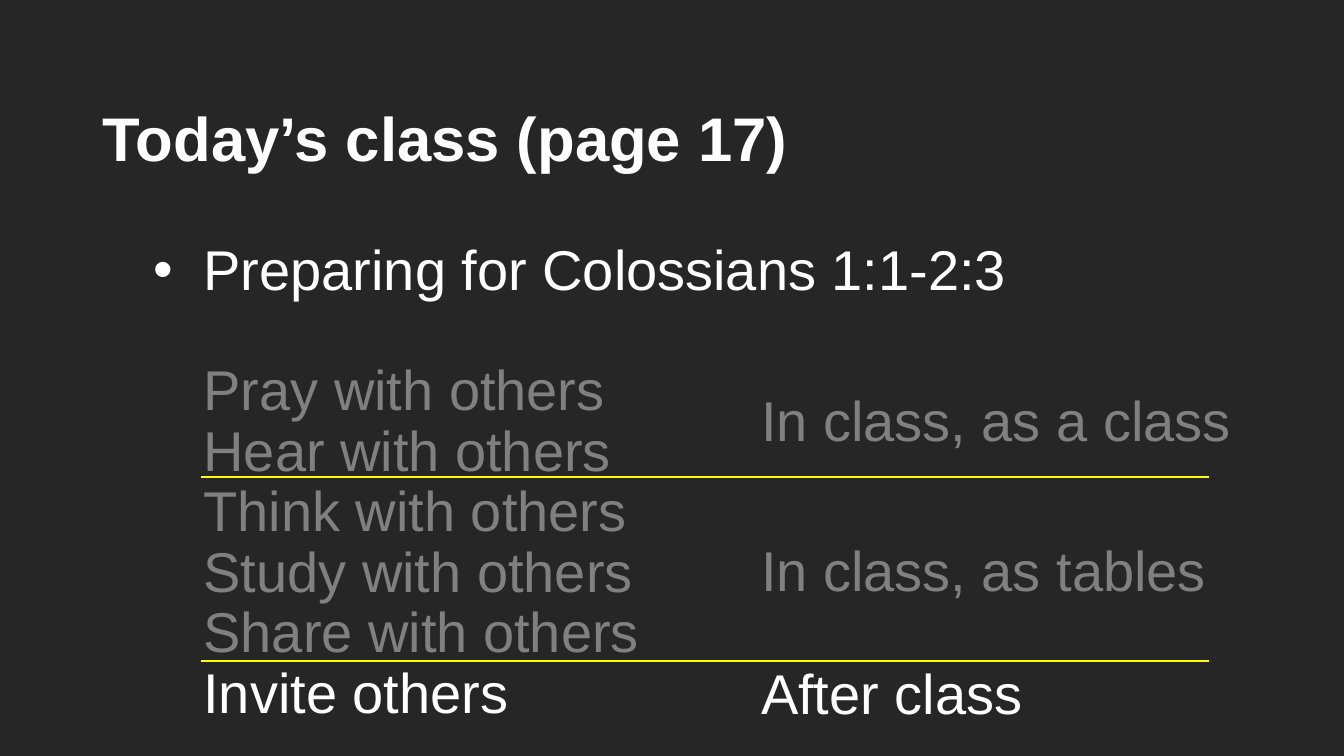
from lxml import etree
from pptx import Presentation
from pptx.dml.color import RGBColor
from pptx.enum.shapes import MSO_CONNECTOR
from pptx.enum.text import MSO_ANCHOR, PP_ALIGN
from pptx.oxml.ns import qn
from pptx.util import Inches, Pt

STRAIGHT = MSO_CONNECTOR.STRAIGHT
MIDDLE, TOP = MSO_ANCHOR.MIDDLE, MSO_ANCHOR.TOP
LEFT = PP_ALIGN.LEFT

COLORS = {"background": "262626", "active": "FFFFFF", "muted": "808080", "rule": "FFFF00"}
FONT = "Arial"
TITLE_SIZE, BODY_SIZE = 44, 40
LINE_SPACING = 0.9
LINE_PITCH = 43
MARGIN, CONTENT_WIDTH = 0.92, 11.5
STEP_INDENT, BULLET_HANG = 1, 0.5
RULE_LEFT, RULE_RIGHT = 1.99, 11.99
PLACE_LEFT, PLACE_WIDTH, PLACE_HEIGHT = 7.45, 4.97, 0.71

HEADING = "Preparing for Colossians 1:1-2:3"
STEPS = [
    ("Pray with others", "muted"),
    ("Hear with others", "muted"),
    ("Think with others", "muted"),
    ("Study with others", "muted"),
    ("Share with others", "muted"),
    ("Invite others", "active"),
]
PLACES = [
    ("In class, as a class", 3.85, "muted"),
    ("In class, as tables", 5.34, "muted"),
    ("After class", 6.56, "active"),
]
RULES = [4.73, 6.56]


def color(name):
    """Return the named colour."""
    return RGBColor.from_string(COLORS[name])


def format_paragraph(paragraph, size, color_name, bold=False):
    """Set the alignment, spacing and run font of a paragraph."""
    paragraph.alignment = LEFT
    paragraph.line_spacing = LINE_SPACING
    for run in paragraph.runs:
        run.font.name = FONT
        run.font.size = Pt(size)
        run.font.bold = bold
        run.font.color.rgb = color(color_name)


def indent(paragraph, margin, first_line=0, bullet=None):
    """Indent a paragraph and give it a bullet if one is named."""
    properties = paragraph._p.get_or_add_pPr()
    properties.set("marL", str(Inches(margin)))
    properties.set("indent", str(Inches(first_line)))
    if bullet:
        font = etree.SubElement(properties, qn("a:buFont"))
        font.set("typeface", FONT)
        etree.SubElement(properties, qn("a:buChar")).set("char", bullet)


def add_text_box(slide, left, top, width, height, text):
    """Add a wrapping text box and return its paragraphs."""
    box = slide.shapes.add_textbox(Inches(left), Inches(top), Inches(width), Inches(height))
    frame = box.text_frame
    frame.word_wrap = True
    frame.vertical_anchor = TOP
    frame.text = text
    return frame.paragraphs


def set_title(slide, left, top, width, height):
    """Place and format the title."""
    title = slide.shapes.title
    title.left, title.top = Inches(left), Inches(top)
    title.width, title.height = Inches(width), Inches(height)
    title.text_frame.text = "Today’s class (page 17)"
    title.text_frame.vertical_anchor = MIDDLE
    format_paragraph(title.text_frame.paragraphs[0], TITLE_SIZE, "active", bold=True)


def add_steps(slide, left, top, width, height):
    """Add the bulleted heading with the steps below it."""
    lines = [(HEADING, "active")] + STEPS
    text = "\n".join(line for line, _ in lines)
    paragraphs = add_text_box(slide, left, top, width, height, text)
    for paragraph, (_, color_name) in zip(paragraphs, lines):
        indent(paragraph, STEP_INDENT)
        format_paragraph(paragraph, BODY_SIZE, color_name)
    indent(paragraphs[0], STEP_INDENT, -BULLET_HANG, "•")
    paragraphs[1].space_before = Pt(LINE_PITCH)


def add_rules(slide, left, right):
    """Add the rules that separate the groups of steps."""
    for top in RULES:
        rule = slide.shapes.add_connector(
            STRAIGHT, Inches(left), Inches(top), Inches(right), Inches(top))
        rule.line.color.rgb = color("rule")
        rule.line.width = Pt(1.5)
        etree.SubElement(rule._element.spPr, qn("a:effectLst"))


def add_places(slide, left, width, height):
    """Add the label that says where each group of steps happens."""
    for text, top, color_name in PLACES:
        paragraph = add_text_box(slide, left, top, width, height, text)[0]
        format_paragraph(paragraph, BODY_SIZE, color_name)


def main():
    """Build and save the presentation."""
    presentation = Presentation()
    presentation.slide_width, presentation.slide_height = Inches(13.33), Inches(7.5)
    slide = presentation.slides.add_slide(presentation.slide_layouts[5])
    slide.background.fill.solid()
    slide.background.fill.fore_color.rgb = color("background")
    set_title(slide, MARGIN, 0.68, CONTENT_WIDTH, 1.45)
    add_steps(slide, MARGIN, 2.35, CONTENT_WIDTH, 4.4)
    add_rules(slide, RULE_LEFT, RULE_RIGHT)
    add_places(slide, PLACE_LEFT, PLACE_WIDTH, PLACE_HEIGHT)
    presentation.save("out.pptx")


if __name__ == "__main__":
    main()
